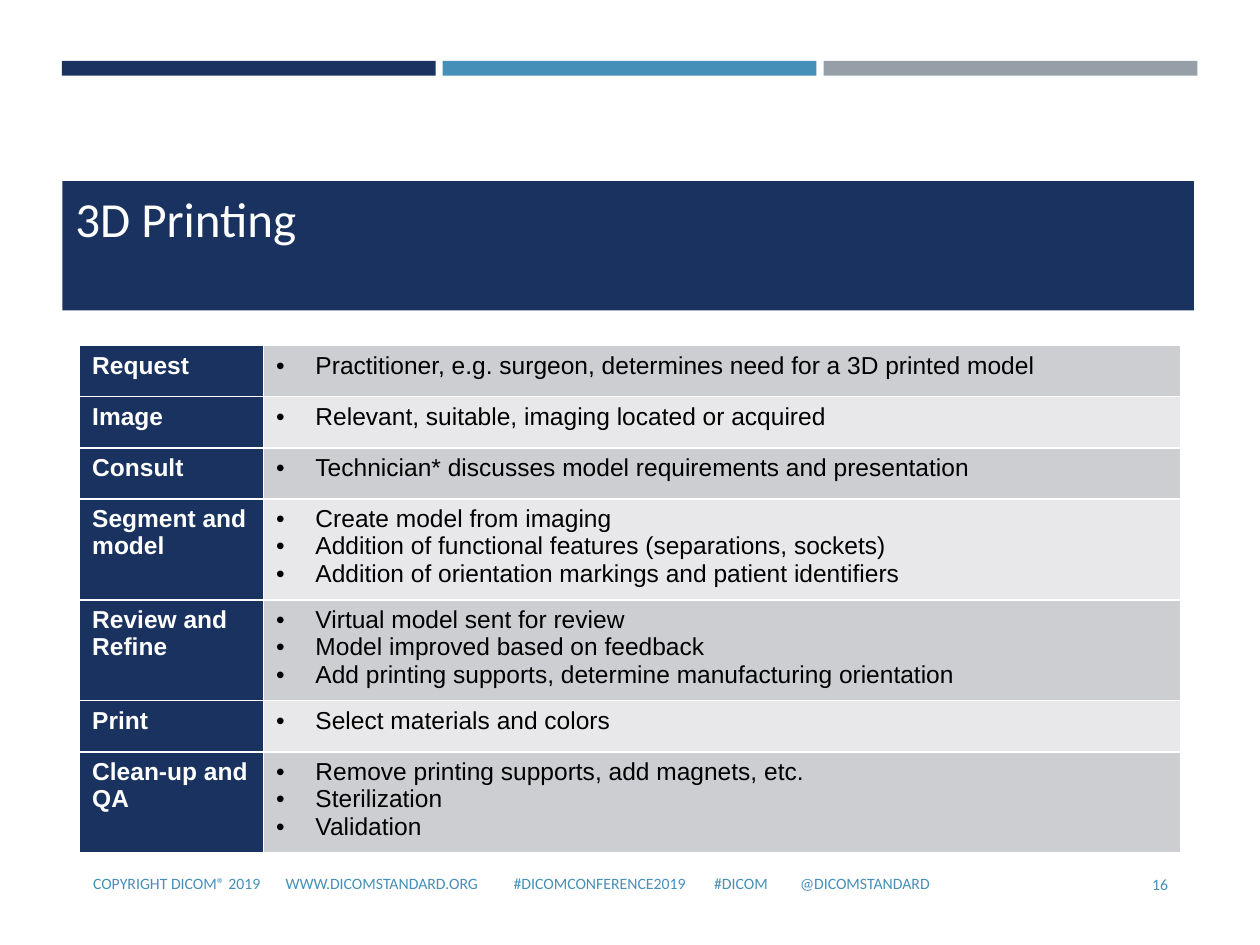
from lxml.etree import SubElement
from pptx import Presentation
from pptx.dml.color import RGBColor
from pptx.enum.shapes import MSO_SHAPE
from pptx.enum.text import MSO_ANCHOR, PP_ALIGN
from pptx.oxml.ns import qn
from pptx.util import Pt

COLORS = {
    "navy": "1A3260",
    "blue": "4590B8",
    "gray": "969FA7",
    "dark_band": "CDCED2",
    "light_band": "E8E8EA",
    "white": "FFFFFF",
    "black": "000000",
}

STEPS = [
    ("Request", ["Practitioner, e.g. surgeon, determines need for a 3D printed model"]),
    ("Image", ["Relevant, suitable, imaging located or acquired"]),
    ("Consult", ["Technician* discusses model requirements and presentation"]),
    ("Segment and model", [
        "Create model from imaging",
        "Addition of functional features (separations, sockets)",
        "Addition of orientation markings and patient identifiers",
    ]),
    ("Review and Refine", [
        "Virtual model sent for review",
        "Model improved based on feedback",
        "Add printing supports, determine manufacturing orientation",
    ]),
    ("Print", ["Select materials and colors"]),
    ("Clean-up and QA", [
        "Remove printing supports, add magnets, etc.",
        "Sterilization",
        "Validation",
    ]),
]

FOOTER = [
    "COPYRIGHT DICOM® 2019",
    "WWW.DICOMSTANDARD.ORG",
    "#DICOMCONFERENCE2019",
    "#DICOM",
    "@DICOMSTANDARD",
]
FOOTER_TABS = [110, 240.3, 354.9, 404]
COLUMN_WIDTHS = [105.1, 524.2]
ROW_HEIGHT = 29.2
TALL_ROW_HEIGHT = 54.3
BULLET_INDENT = 22.5


def color(name):
    return RGBColor.from_string(COLORS[name])


def write(paragraph, text, size=14, font="Arial", fill="black", bold=False,
          align=PP_ALIGN.LEFT, bullet=False, tabs=()):
    paragraph.alignment = align
    properties = paragraph._p.get_or_add_pPr()
    if bullet:
        properties.set("marL", str(Pt(BULLET_INDENT)))
        properties.set("indent", str(-Pt(BULLET_INDENT)))
        SubElement(properties, qn("a:buFont"), typeface="Arial")
        SubElement(properties, qn("a:buChar"), char="•")
    if tabs:
        tab_list = SubElement(properties, qn("a:tabLst"))
        for position in tabs:
            SubElement(tab_list, qn("a:tab"), pos=str(Pt(position)), algn="l")
    run = paragraph.add_run()
    run.text = text
    run.font.name = font
    run.font.size = Pt(size)
    run.font.bold = bold
    run.font.color.rgb = color(fill)


def add_bar(slide, left, top, width, height, fill):
    shape = slide.shapes.add_shape(
        MSO_SHAPE.RECTANGLE, Pt(left), Pt(top), Pt(width), Pt(height))
    shape.shadow.inherit = False
    shape.fill.solid()
    shape.fill.fore_color.rgb = color(fill)
    shape.line.fill.background()


def add_text(slide, left, top, width, height, text,
             anchor=MSO_ANCHOR.MIDDLE, **text_format):
    frame = slide.shapes.add_textbox(
        Pt(left), Pt(top), Pt(width), Pt(height)).text_frame
    frame.word_wrap = True
    frame.vertical_anchor = anchor
    write(frame.paragraphs[0], text, font="Calibri", **text_format)


def fill_cell(cell, lines, band, **text_format):
    properties = cell._tc.get_or_add_tcPr()
    for side in ("lnL", "lnR", "lnT", "lnB"):
        line = SubElement(properties, qn(f"a:{side}"), w=str(Pt(1)))
        solid = SubElement(line, qn("a:solidFill"))
        SubElement(solid, qn("a:srgbClr"), val=COLORS["white"])
    cell.fill.solid()
    cell.fill.fore_color.rgb = color(band)
    frame = cell.text_frame
    for index, text in enumerate(lines):
        paragraph = frame.add_paragraph() if index else frame.paragraphs[0]
        write(paragraph, text, **text_format)


def add_steps_table(slide, left, top):
    heights = [TALL_ROW_HEIGHT if len(lines) > 1 else ROW_HEIGHT for _, lines in STEPS]
    table = slide.shapes.add_table(
        len(STEPS), len(COLUMN_WIDTHS), Pt(left), Pt(top),
        Pt(sum(COLUMN_WIDTHS)), Pt(sum(heights))).table
    table.first_row = False
    table.horz_banding = False
    for column, width in zip(table.columns, COLUMN_WIDTHS):
        column.width = Pt(width)
    for index, (step, lines) in enumerate(STEPS):
        table.rows[index].height = Pt(heights[index])
        band = "light_band" if index % 2 else "dark_band"
        fill_cell(table.cell(index, 0), [step], "navy", fill="white", bold=True)
        fill_cell(table.cell(index, 1), lines, band, bullet=True)


def main():
    presentation = Presentation()
    presentation.slide_width = Pt(720)
    presentation.slide_height = Pt(540)
    slide = presentation.slides.add_slide(presentation.slide_layouts[6])

    for index, fill in enumerate(("navy", "blue", "gray")):
        add_bar(slide, 35.4 + index * 217.6, 34.8, 213.6, 8.4, fill)
    add_bar(slide, 35.7, 103.5, 646.6, 73.9, "navy")
    add_text(slide, 36, 102.2, 629.3, 42.5, "3D Printing",
             anchor=MSO_ANCHOR.BOTTOM, size=28, fill="white")
    add_steps_table(slide, 45.5, 197.5)
    add_text(slide, 46.1, 486.7, 599, 36, "\t".join(FOOTER),
             size=9, fill="blue", tabs=FOOTER_TABS)
    add_text(slide, 644.4, 487.4, 30.2, 36, "16",
             size=9, fill="blue", align=PP_ALIGN.RIGHT)

    presentation.save("out.pptx")


if __name__ == "__main__":
    main()
